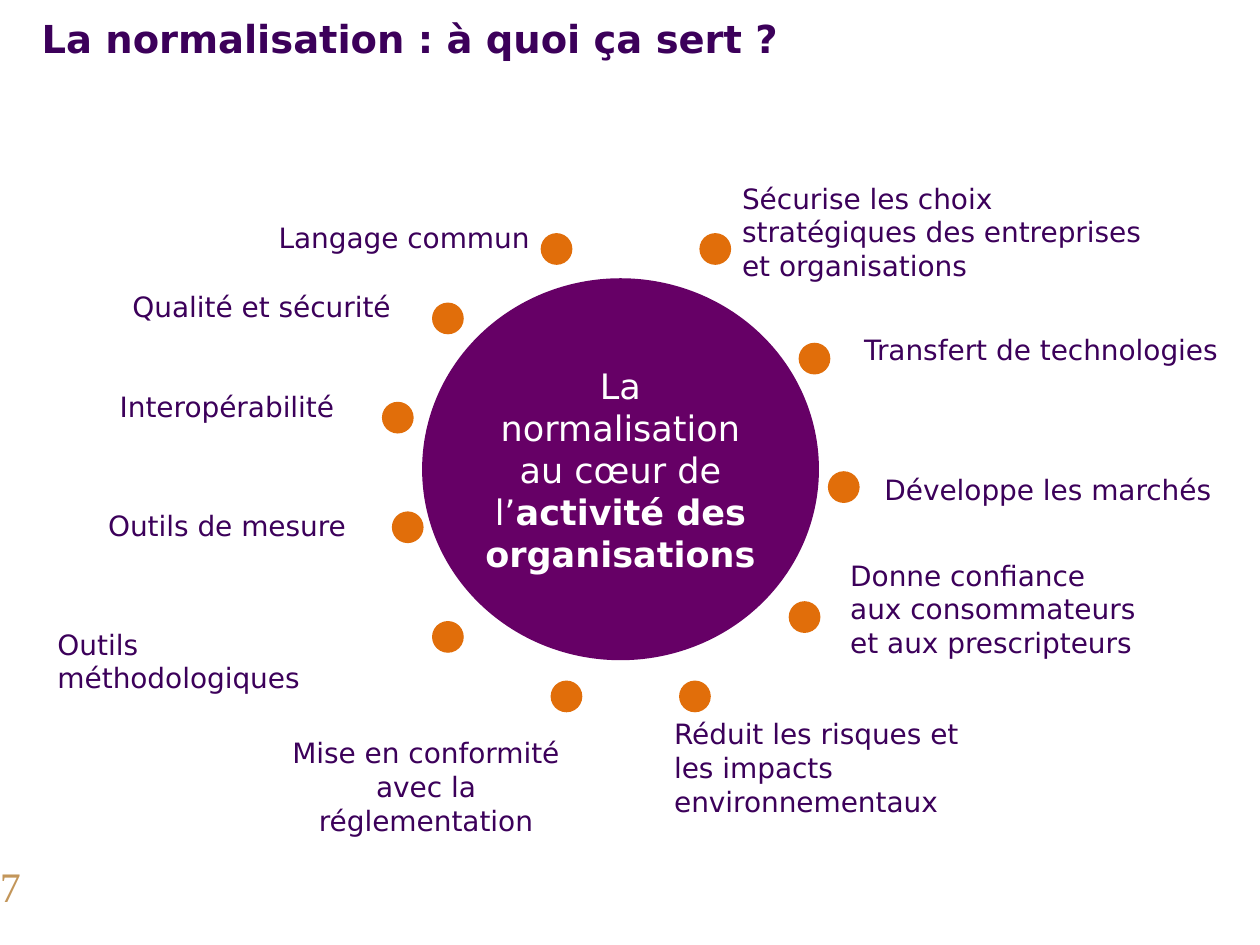
from pptx import Presentation
from pptx.dml.color import RGBColor
from pptx.enum.shapes import MSO_SHAPE
from pptx.enum.text import MSO_ANCHOR, PP_ALIGN
from pptx.util import Cm, Pt

PURPLE = RGBColor(0x3C, 0x00, 0x5A)
VIOLET = RGBColor(0x66, 0x00, 0x66)
ORANGE = RGBColor(0xE1, 0x6E, 0x0A)
GOLD = RGBColor(0xC3, 0x96, 0x5A)
WHITE = RGBColor(0xFF, 0xFF, 0xFF)

TITLE_FONT = {"name": "DejaVu Sans", "size": Pt(22), "bold": True}
LABEL_FONT = {"name": "DejaVu Sans", "size": Pt(16)}
CENTER_FONT = {"name": "DejaVu Sans", "size": Pt(20)}
NUMBER_FONT = {"name": "Times New Roman", "size": Pt(24)}
NO_MARGINS = {"margin_left": 0, "margin_top": 0, "margin_right": 0,
              "margin_bottom": 0, "word_wrap": True}
DOT_SIZE = 0.64
LEFT, CENTER, RIGHT = PP_ALIGN.LEFT, PP_ALIGN.CENTER, PP_ALIGN.RIGHT


def apply_format(target, values, color=None):
    for name, value in values.items():
        setattr(target, name, value)
    if color is not None:
        target.color.rgb = color


def add_ellipse(slide, left, top, width, height, color):
    shape = slide.shapes.add_shape(
        MSO_SHAPE.OVAL, Cm(left), Cm(top), Cm(width), Cm(height))
    shape.shadow.inherit = False
    shape.fill.solid()
    shape.fill.fore_color.rgb = color
    shape.line.fill.background()
    return shape


presentation = Presentation()
presentation.slide_width = Cm(25.4)
presentation.slide_height = Cm(19.05)
slide = presentation.slides.add_slide(presentation.slide_layouts[5])

title = slide.shapes.title
apply_format(title, {"left": Cm(0.84), "top": Cm(0.41),
                     "width": Cm(18.42), "height": Cm(1.68)})
apply_format(title.text_frame,
             NO_MARGINS | {"vertical_anchor": MSO_ANCHOR.TOP})
title.text_frame.text = "La normalisation : à quoi ça sert ?"
paragraph = title.text_frame.paragraphs[0]
apply_format(paragraph, {"alignment": LEFT, "line_spacing": 0.9})
apply_format(paragraph.font, TITLE_FONT, PURPLE)

circle = add_ellipse(slide, 8.51, 5.61, 8, 7.7, VIOLET)
apply_format(circle.text_frame,
             NO_MARGINS | {"vertical_anchor": MSO_ANCHOR.MIDDLE})
paragraph = circle.text_frame.paragraphs[0]
paragraph.alignment = CENTER
for text, bold in [("La normalisation au cœur de l’", False),
                   ("activité des organisations", True)]:
    run = paragraph.add_run()
    run.text = text
    apply_format(run.font, CENTER_FONT | {"bold": bold}, WHITE)

benefits = [
    ("Langage commun", RIGHT, (3.51, 4.32, 7.42, 0.94), (10.9, 4.7)),
    ("Qualité et sécurité", RIGHT, (1.3, 5.72, 6.83, 0.94), (8.71, 6.1)),
    ("Interopérabilité", RIGHT, (0, 7.72, 6.99, 0.94), (7.7, 8.1)),
    ("Outils de mesure", LEFT, (1.93, 10.13, 5.6, 0.94), (7.9, 10.31)),
    ("Outils méthodologiques", LEFT, (0.91, 12.52, 6.86, 1.63), (8.71, 12.52)),
    ("Mise en conformité\vavec la réglementation", CENTER,
     (5.16, 14.71, 6.86, 2.29), (11.1, 13.72)),
    ("Réduit les risques et\nles impacts environnementaux", LEFT,
     (13.34, 14.33, 8.9, 2.29), (13.69, 13.72)),
    ("Donne confiance\vaux consommateurs\net aux prescripteurs", LEFT,
     (16.89, 11.13, 7.42, 2.29), (15.9, 12.12)),
    ("Développe les marchés", LEFT, (17.58, 9.4, 7.8, 0.94), (16.69, 9.5)),
    ("Transfert de technologies", LEFT, (17.17, 6.58, 7.9, 0.94), (16.1, 6.91)),
    ("Sécurise les choix\nstratégiques des entreprises\vet organisations", LEFT,
     (14.71, 3.53, 9.07, 2.29), (14.1, 4.7)),
]
for text, alignment, box, dot in benefits:
    add_ellipse(slide, *dot, DOT_SIZE, DOT_SIZE, ORANGE)
    label = slide.shapes.add_textbox(*[Cm(length) for length in box])
    label.text_frame.word_wrap = True
    label.text_frame.text = text
    for paragraph in label.text_frame.paragraphs:
        paragraph.alignment = alignment
        apply_format(paragraph.font, LABEL_FONT, PURPLE)

number = slide.shapes.add_textbox(Cm(0), Cm(17.09), Cm(2.06), Cm(1.27))
apply_format(number.text_frame,
             NO_MARGINS | {"vertical_anchor": MSO_ANCHOR.BOTTOM})
number.text_frame.text = "7"
apply_format(number.text_frame.paragraphs[0].font, NUMBER_FONT, GOLD)

presentation.save("out.pptx")
